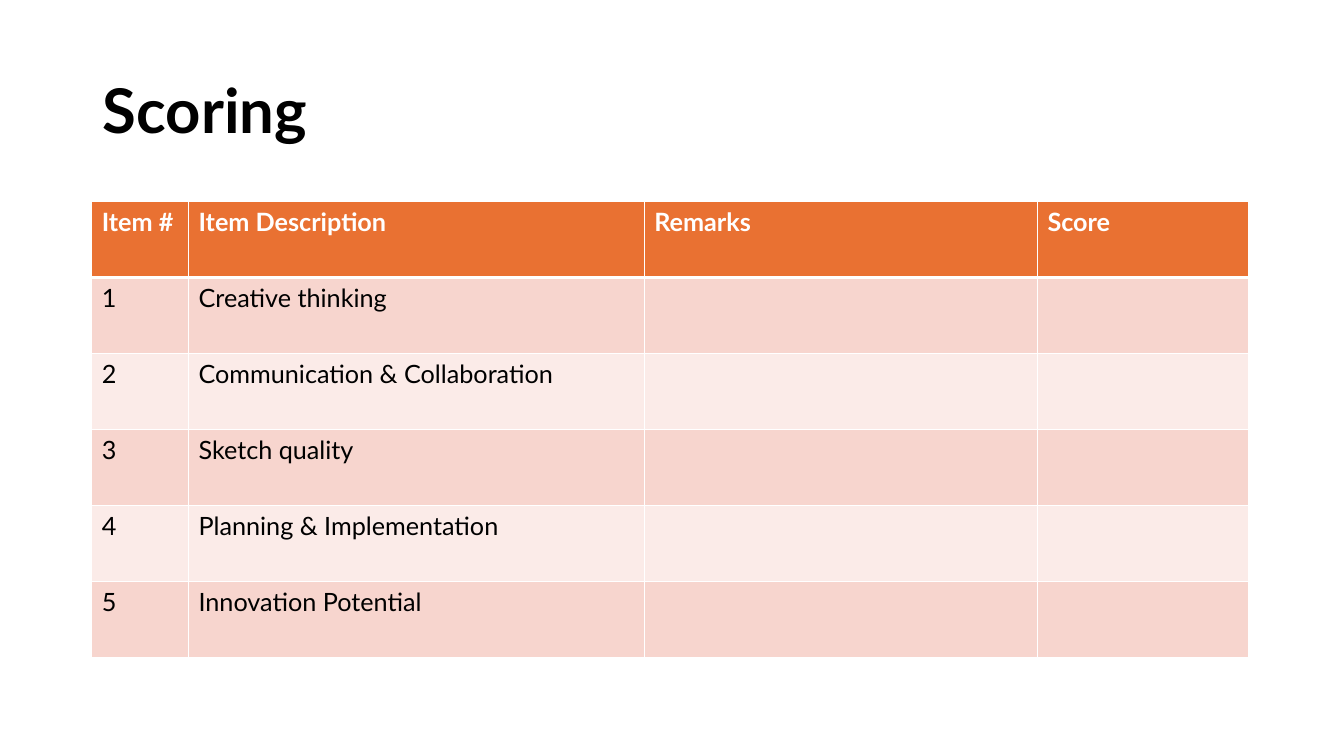
from lxml.etree import SubElement
from pptx import Presentation
from pptx.dml.color import RGBColor as Color
from pptx.enum.text import MSO_ANCHOR as Anchor, PP_ALIGN as Align
from pptx.oxml.ns import qn
from pptx.util import Inches, Pt

FONT = "Lato"
COLORS = {
    "text": "000000",
    "white": "FFFFFF",
    "header": "E97132",
    "odd": "F7D5CE",
    "even": "FBEBE8",
}
HEADINGS = ["Item #", "Item Description", "Remarks", "Score"]
ITEMS = [
    "Creative thinking",
    "Communication & Collaboration",
    "Sketch quality",
    "Planning & Implementation",
    "Innovation Potential",
]
COLUMN_WIDTHS = [0.96, 4.52, 3.9, 2.09]
TABLE_HEIGHT = 4.52


def style_paragraph(para, size, color, bold):
    para.font.name = FONT
    para.font.size = Pt(size)
    para.font.bold = bold
    para.font.color.rgb = Color.from_string(COLORS[color])


def add_title(page, text):
    title = page.shapes.title
    title.left, title.top = Inches(0.92), Inches(0.4)
    title.width, title.height = Inches(11.5), Inches(1.45)
    frame = title.text_frame
    frame.text = text
    frame.word_wrap = True
    frame.vertical_anchor = Anchor.MIDDLE
    para = frame.paragraphs[0]
    para.alignment = Align.LEFT
    para.line_spacing = 0.9
    style_paragraph(para, 44, "text", True)


def add_borders(cell, top, bottom):
    properties = cell._tc.get_or_add_tcPr()
    for side, width in {"L": 1, "R": 1, "T": top, "B": bottom}.items():
        line = SubElement(properties, qn(f"a:ln{side}"), w=str(Pt(width)))
        fill = SubElement(line, qn("a:solidFill"))
        SubElement(fill, qn("a:srgbClr"), val=COLORS["white"])


def format_cell(cell, text, row):
    is_header = row == 0
    add_borders(cell, top=3 if row == 1 else 1, bottom=3 if is_header else 1)
    fill = "header" if is_header else "odd" if row % 2 else "even"
    cell.fill.solid()
    cell.fill.fore_color.rgb = Color.from_string(COLORS[fill])
    cell.text = text
    color = "white" if is_header else "text"
    style_paragraph(cell.text_frame.paragraphs[0], 18, color, is_header)


def add_score_table(page):
    rows = [HEADINGS]
    rows += [[str(number), item, "", ""] for number, item in enumerate(ITEMS, 1)]
    table = page.shapes.add_table(
        len(rows), len(HEADINGS), Inches(0.91), Inches(2),
        Inches(sum(COLUMN_WIDTHS)), Inches(TABLE_HEIGHT),
    ).table
    for column, width in zip(table.columns, COLUMN_WIDTHS):
        column.width = Inches(width)
    for row, texts in enumerate(rows):
        table.rows[row].height = Inches(TABLE_HEIGHT / len(rows))
        for column, text in enumerate(texts):
            format_cell(table.cell(row, column), text, row)


def main():
    deck = Presentation()
    deck.slide_width, deck.slide_height = Inches(13.33), Inches(7.5)
    page = deck.slides.add_slide(deck.slide_layouts[5])
    add_title(page, "Scoring")
    add_score_table(page)
    deck.save("out.pptx")


if __name__ == "__main__":
    main()
